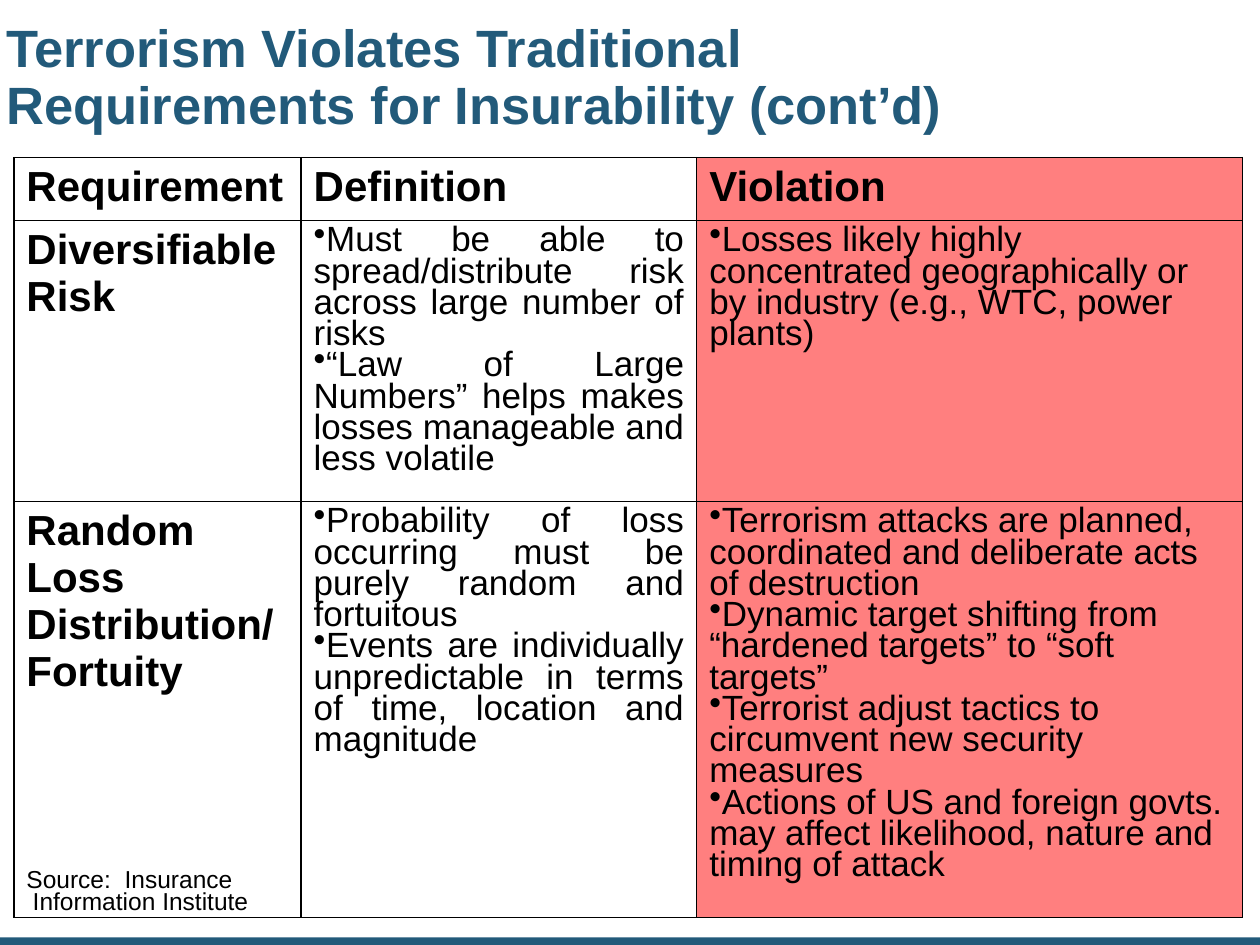
import pptx
import pptx.util
import pptx.oxml
import pptx.oxml.ns
import pptx.dml.color
import pptx.enum.shapes
import pptx.enum.text

Inches = pptx.util.Inches
Pt = pptx.util.Pt
Align = pptx.enum.text.PP_ALIGN
Anchor = pptx.enum.text.MSO_ANCHOR

COLORS = {"ink": "000000", "teal": "225A7A", "red": "FF0000"}
NS = pptx.oxml.ns.nsdecls("a")
EDGE = (
    '<a:{side} {ns} w="12700"><a:solidFill><a:srgbClr val="{color}"/>'
    "</a:solidFill></a:{side}>"
)

HEADS = ["Requirement", "Definition", "Violation"]
RULES = [
    (
        "Diversifiable Risk",
        [
            "Must be able to spread/distribute risk across large number of risks",
            "“Law of Large Numbers” helps makes losses manageable and less volatile",
        ],
        [
            "Losses likely highly concentrated geographically or by industry "
            "(e.g., WTC, power plants)",
        ],
    ),
    (
        "Random Loss Distribution/Fortuity",
        [
            "Probability of loss occurring must be purely random and fortuitous",
            "Events are individually unpredictable in terms of time, location "
            "and magnitude",
        ],
        [
            "Terrorism attacks are planned, coordinated and deliberate acts "
            "of destruction",
            "Dynamic target shifting from “hardened targets” to “soft targets”",
            "Terrorist adjust tactics to circumvent new security measures",
            "Actions of US and foreign govts. may affect likelihood, nature "
            "and timing of attack",
        ],
    ),
]


class Deck:
    font = "Arial"

    def __init__(self, width, height):
        self.file = pptx.Presentation()
        self.file.slide_width = Inches(width)
        self.file.slide_height = Inches(height)
        self.slide = self.file.slides.add_slide(self.file.slide_layouts[6])

    def tint(self, name):
        return pptx.dml.color.RGBColor.from_string(COLORS[name])

    def add(self, para, text, size, bold=False, color="ink"):
        run = para.add_run()
        run.text = text
        run.font.name = self.font
        run.font.size = Pt(size)
        run.font.bold = bold
        run.font.color.rgb = self.tint(color)

    def lines(self, frame, count):
        """Return the given number of paragraphs, the first one included."""
        return [frame.paragraphs[0]] + [
            frame.add_paragraph() for _ in range(count - 1)
        ]

    def bar(self, left, top, width, height, color):
        shape = self.slide.shapes.add_shape(
            pptx.enum.shapes.MSO_SHAPE.RECTANGLE,
            Inches(left), Inches(top), Inches(width), Inches(height),
        )
        shape.shadow.inherit = False
        shape.fill.solid()
        shape.fill.fore_color.rgb = self.tint(color)
        shape.line.fill.background()

    def text(self, place, texts, size, inset, space, anchor, **style):
        box = self.slide.shapes.add_textbox(*map(Inches, place))
        frame = box.text_frame
        frame.word_wrap = True
        frame.vertical_anchor = anchor
        frame.margin_left = frame.margin_right = Inches(inset)
        frame.margin_top = frame.margin_bottom = Inches(inset)
        paras = self.lines(frame, len(texts))
        for para, text in zip(paras, texts):
            para.line_spacing = space
            self.add(para, text, size, **style)
        return paras

    def bullet(self, para):
        props = para._p.get_or_add_pPr()
        props.set("marL", "0")
        props.set("indent", "0")
        for xml in (
            f'<a:buChar {NS} char="•"/>',
            f'<a:tabLst {NS}><a:tab pos="{Inches(0.25)}" algn="l"/></a:tabLst>',
        ):
            props.append(pptx.oxml.parse_xml(xml))

    def cell(self, cell, content, align, shade):
        """Fill a cell: a string is a bold label, a list is bullets."""
        cell.margin_left = cell.margin_right = Inches(0.1)
        cell.margin_top = cell.margin_bottom = Inches(0.05)
        props = cell._tc.get_or_add_tcPr()
        for side in ("lnL", "lnR", "lnT", "lnB"):
            xml = EDGE.format(side=side, ns=NS, color=COLORS["ink"])
            props.append(pptx.oxml.parse_xml(xml))
        if shade:
            cell.fill.solid()
            cell.fill.fore_color.rgb = self.tint(shade)
            fill = props.find(pptx.oxml.ns.qn("a:solidFill"))
            fill[0].append(pptx.oxml.parse_xml(f'<a:alpha {NS} val="50000"/>'))
        else:
            cell.fill.background()
        label = isinstance(content, str)
        items = [content] if label else content
        for para, item in zip(self.lines(cell.text_frame, len(items)), items):
            if not label:
                self.bullet(para)
                para.line_spacing = 0.8
            para.alignment = align
            self.add(para, item, 24 if label else 20, bold=label)

    def table(self, left, top, widths, heights, rows, shades):
        frame = self.slide.shapes.add_table(
            len(rows), len(widths), Inches(left), Inches(top),
            Inches(sum(widths)), Inches(sum(heights)),
        )
        grid = frame.table
        grid.first_row = grid.horz_banding = False
        for col, width in zip(grid.columns, widths):
            col.width = Inches(width)
        for row, height, items in zip(grid.rows, heights, rows):
            row.height = Inches(height)
            for cell, item, shade in zip(row.cells, items, shades):
                loose = shade and not isinstance(item, str)
                align = Align.LEFT if loose else Align.JUSTIFY
                self.cell(cell, item, align, shade)


def main():
    deck = Deck(10, 7.5)
    deck.bar(0, 7.44, 10, 0.06, "teal")
    deck.table(
        0.11, 1.25, [2.28, 3.14, 4.33], [0.5, 2.23, 3.3],
        [HEADS, *RULES], [None, None, "red"],
    )
    source = deck.text(
        (0.21, 6.91, 7.28, 0.35),
        ["Source:  Insurance", "Information Institute"],
        14, 0, 0.75, Anchor.TOP,
    )
    source[1]._p.get_or_add_pPr().set("marL", str(Inches(0.05)))
    deck.text(
        (0, 0, 8.33, 1.25),
        ["Terrorism Violates Traditional Requirements for Insurability (cont’d)"],
        30, 0.05, 0.9, Anchor.MIDDLE, bold=True, color="teal",
    )
    deck.file.save("out.pptx")


if __name__ == "__main__":
    main()
